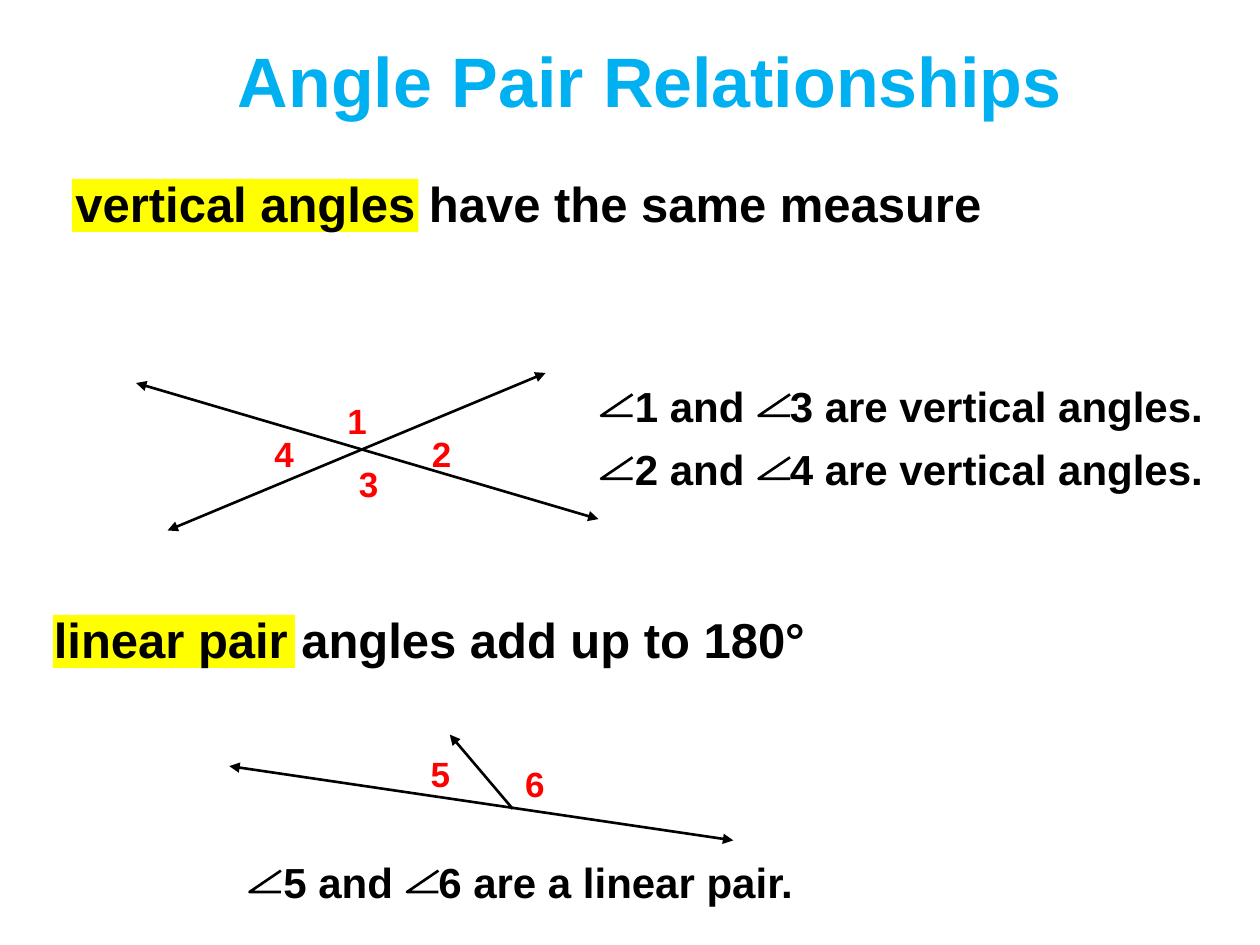
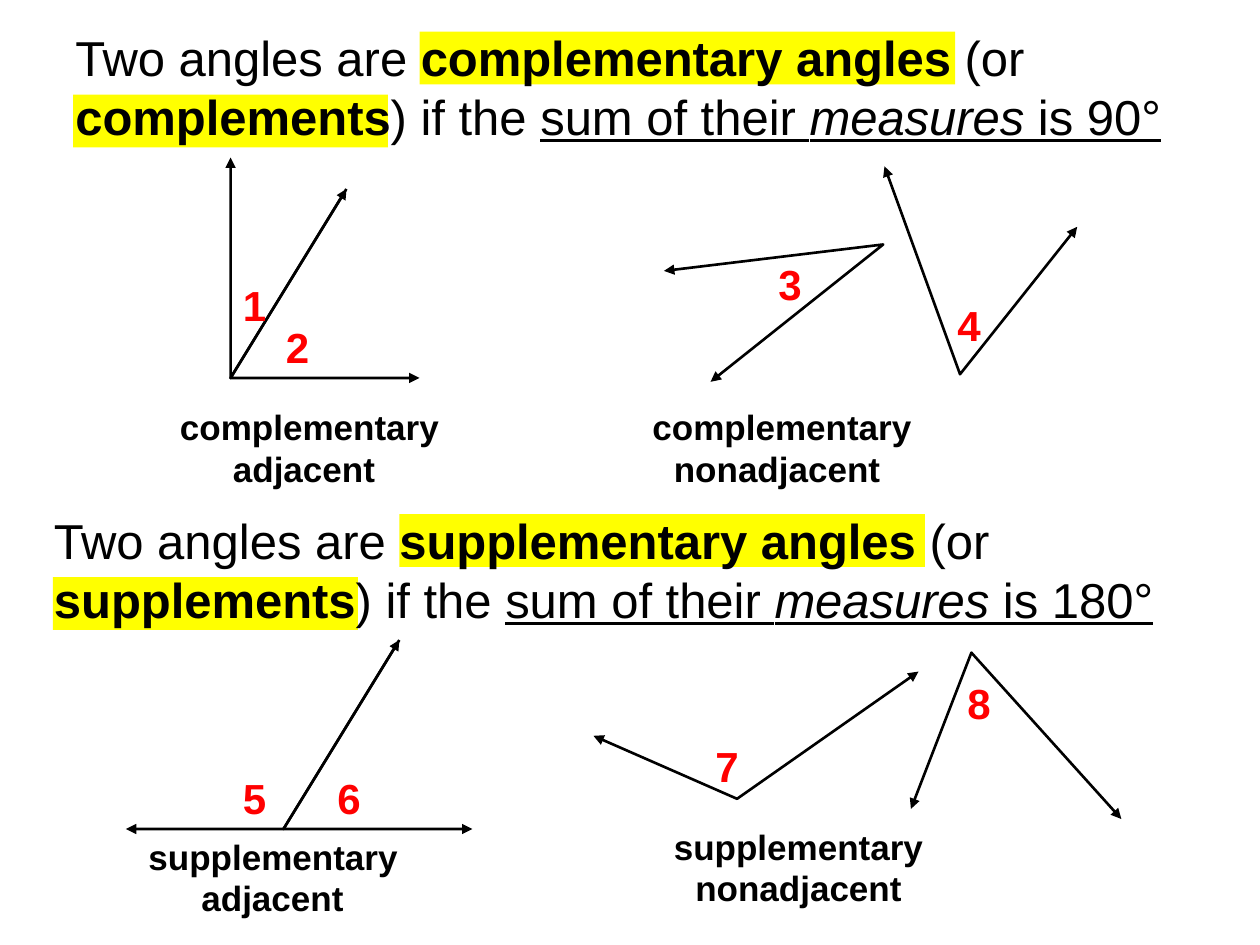
import dataclasses

import lxml.etree
import pptx
import pptx.dml.color
import pptx.enum.shapes
import pptx.enum.text
import pptx.oxml.ns
import pptx.util

Inches = pptx.util.Inches
RGB = pptx.dml.color.RGBColor
qn = pptx.oxml.ns.qn


@dataclasses.dataclass(frozen=True)
class Theme:
    font: str = "Arial"
    ink: RGB = RGB.from_string("000000")
    title_color: RGB = RGB.from_string("00B0F0")
    number_color: RGB = RGB.from_string("FF0000")
    highlight: RGB = RGB.from_string("FFFF00")
    title: int = 40
    rule: int = 28
    body: int = 24
    label: int = 20
    line: float = 1.5


theme = Theme()


def add_text(s, left, top, width, runs, size, color=theme.ink, lines=1, tab=None):
    """Add a text box; runs are (text, marks), with marks from b, i and u."""
    height = lines * size * 1.2 / 72 + 0.1
    sp = s.shapes.add_textbox(Inches(left), Inches(top), Inches(width), Inches(height))
    tf = sp.text_frame
    tf.word_wrap = True
    tf.auto_size = pptx.enum.text.MSO_AUTO_SIZE.SHAPE_TO_FIT_TEXT
    p = tf.paragraphs[0]
    p_pr = p._p.get_or_add_pPr()
    before = lxml.etree.SubElement(p_pr, qn("a:spcBef"))
    lxml.etree.SubElement(before, qn("a:spcPct"), val="50000")
    if tab:
        stops = lxml.etree.SubElement(p_pr, qn("a:tabLst"))
        lxml.etree.SubElement(stops, qn("a:tab"), pos=str(Inches(tab)), algn="l")
    for text, marks in runs:
        r = p.add_run()
        r.text = text
        r.font.name = theme.font
        r.font.size = pptx.util.Pt(size)
        r.font.color.rgb = color
        r.font.bold = "b" in marks
        r.font.italic = "i" in marks
        r.font.underline = "u" in marks


def add_path(s, points, arrows=""):
    """Draw a line through the points; arrows names its ends: head, tail or both."""
    points = [(Inches(x), Inches(y)) for x, y in points]
    if len(points) == 2:
        straight = pptx.enum.shapes.MSO_CONNECTOR.STRAIGHT
        sp = s.shapes.add_connector(straight, *points[0], *points[1])
    else:
        builder = s.shapes.build_freeform(*points[0], scale=1.0)
        builder.add_line_segments(points[1:], close=False)
        sp = builder.convert_to_shape()
        sp.fill.background()
    sp.line.color.rgb = theme.ink
    sp.line.width = pptx.util.Pt(theme.line)
    for end in arrows.split():
        lxml.etree.SubElement(sp.line._ln, qn(f"a:{end}End"), type="triangle")
    lxml.etree.SubElement(sp._element.spPr, qn("a:effectLst"))


prs = pptx.Presentation()
prs.slide_width, prs.slide_height = Inches(10), Inches(7.5)
pairs_slide, sums_slide = [prs.slides.add_slide(prs.slide_layouts[6]) for _ in range(2)]

# Highlight bands behind the key terms
bands = [
    (pairs_slide, 0.42, 4.88, 1.92),
    (pairs_slide, 0.57, 1.42, 2.75),
    (sums_slide, 0.58, 0.75, 2.5),
    (sums_slide, 3.33, 0.25, 4.25),
    (sums_slide, 0.42, 4.58, 2.42),
    (sums_slide, 3.17, 4.08, 4.17),
]
for s, left, top, width in bands:
    rectangle = pptx.enum.shapes.MSO_SHAPE.RECTANGLE
    sp = s.shapes.add_shape(rectangle, Inches(left), Inches(top), Inches(width), Inches(0.42))
    sp.shadow.inherit = False
    sp.fill.solid()
    sp.fill.fore_color.rgb = theme.highlight
    sp.line.fill.background()

# Title and rules of the angle pairs
add_text(pairs_slide, 1.79, 0.25, 7.5, [("Angle Pair Relationships", "b")],
         theme.title, theme.title_color)
add_text(pairs_slide, 0.5, 1.33, 9.08, [("vertical angles have the same measure", "b")], theme.rule)
add_text(pairs_slide, 0.33, 4.79, 9.17, [("linear pair angles add up to 180°", "b")], theme.rule)

# Statements, with an angle sign drawn before each number
statements = [
    (4.94, 2.97, "1 and\t3 are vertical angles."),
    (4.94, 3.47, "2 and\t4 are vertical angles."),
    (2.15, 6.75, "5 and\t6 are a linear pair."),
]
for left, top, text in statements:
    add_text(pairs_slide, left, top, 4.75, [(text, "b")], theme.body, tab=1.23)
    for x in (left - 0.17, left + 1.08):
        add_path(pairs_slide, [(x + 0.25, top + 0.33), (x, top + 0.33), (x + 0.25, top + 0.16)])

# Definitions by sum of measures
definitions = [
    (0.5, 0.17, "complementary angles ", "complements", " is 90°"),
    (0.33, 4, "supplementary angles ", "supplements", " is 180°"),
]
for left, top, term, short_term, total in definitions:
    runs = [("Two angles are ", ""), (term, "b"), ("(or ", ""), (short_term, "b"),
            (") if the ", ""), ("sum of their ", "u"), ("measures", "ui"), (total, "u")]
    add_text(sums_slide, left, top, 9.17, runs, theme.rule, lines=2)

# Rays and crossing lines
both = "head tail"
rays = [
    (pairs_slide, [(1.08, 3.04), (4.75, 4.12)], both),
    (pairs_slide, [(1.33, 4.21), (4.33, 2.96)], both),
    (pairs_slide, [(1.82, 6.08), (5.82, 6.67)], both),
    (pairs_slide, [(4.07, 6.42), (3.57, 5.83)], "tail"),
    (sums_slide, [(1.83, 1.25), (1.83, 3), (2.75, 1.5)], both),
    (sums_slide, [(2.75, 1.5), (1.83, 3), (3.33, 3)], "tail"),
    (sums_slide, [(5.64, 3.03), (7.01, 1.94), (5.27, 2.15)], both),
    (sums_slide, [(7.02, 1.32), (7.62, 2.97), (8.55, 1.8)], both),
    (sums_slide, [(3.17, 5.08), (2.25, 6.58), (3.75, 6.58)], "tail"),
    (sums_slide, [(3.17, 5.08), (2.25, 6.58), (1, 6.58)], both),
    (sums_slide, [(8.9, 6.5), (7.71, 5.18), (7.23, 6.42)], both),
    (sums_slide, [(7.29, 5.33), (5.85, 6.34), (4.71, 5.84)], both),
]
for s, points, arrows in rays:
    add_path(s, points, arrows)

# Angle numbers, counted from 1 on each slide
numbers = [
    (pairs_slide, theme.label,
     [(2.66, 3.12), (3.33, 3.38), (2.75, 3.62), (2.08, 3.38), (3.32, 5.92), (4.07, 6)]),
    (sums_slide, theme.body,
     [(1.83, 2.17), (2.17, 2.5), (6.08, 2), (7.5, 2.33),
      (1.83, 6.08), (2.58, 6.08), (5.58, 5.83), (7.58, 5.33)]),
]
for s, size, places in numbers:
    for number, (left, top) in enumerate(places, 1):
        add_text(s, left, top, 0.5, [(str(number), "b")], size, theme.number_color)

# Two-line captions, the second line set in from the first
captions = [
    (1.33, 3.17, "complementary", "adjacent"),
    (5.08, 3.17, "complementary", "nonadjacent"),
    (1.08, 6.58, "supplementary", "adjacent"),
    (5.25, 6.5, "supplementary", "nonadjacent"),
]
for left, top, kind, position in captions:
    inset, width = (0.42, 1.58) if position == "adjacent" else (0.17, 2)
    add_text(sums_slide, left, top, 2.33, [(kind, "b")], theme.label)
    add_text(sums_slide, left + inset, top + 0.33, width, [(position, "b")], theme.label)

prs.save("out.pptx")
